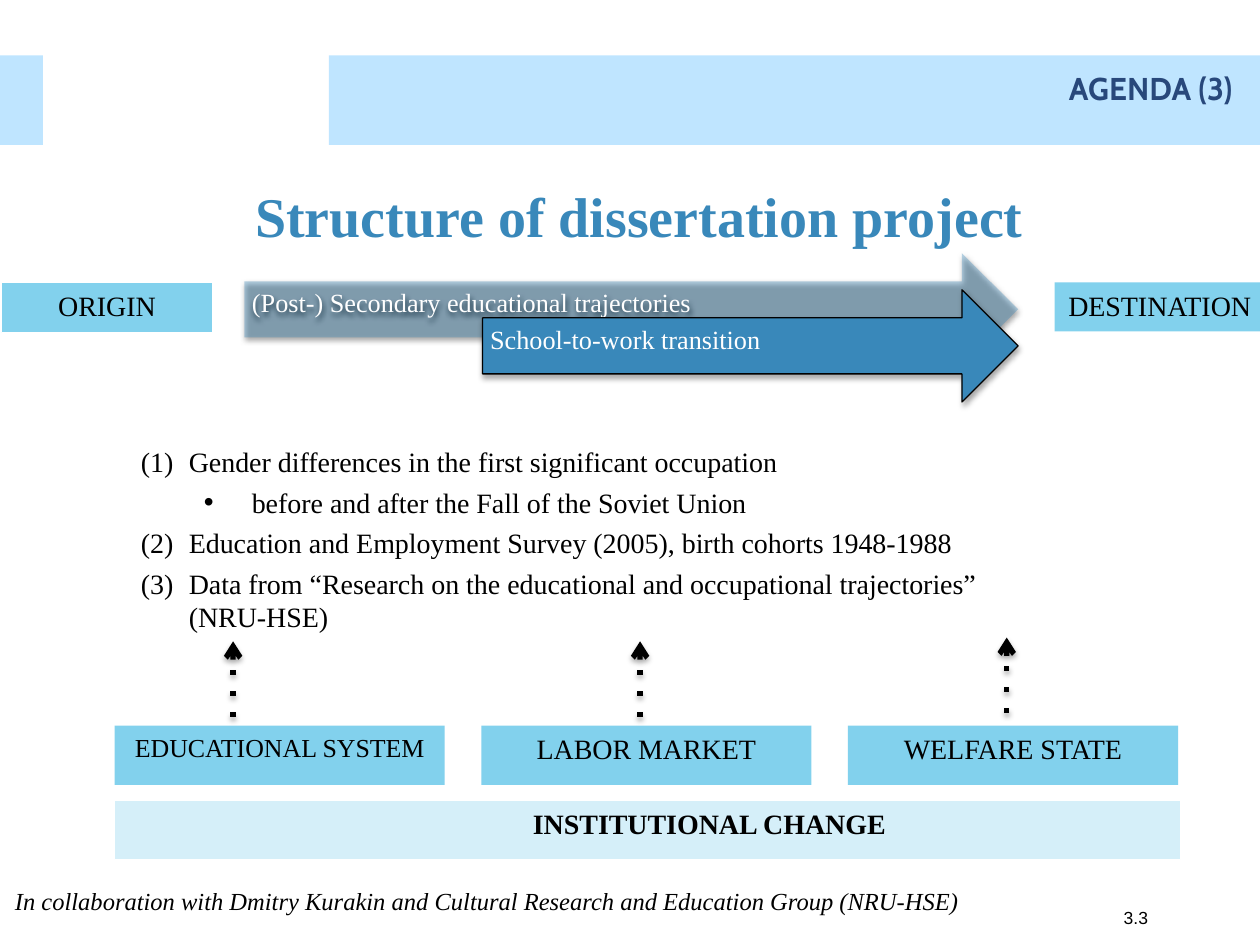
import pptx
import pptx.dml.color
import pptx.enum.dml
import pptx.enum.shapes
import pptx.enum.text
import pptx.oxml
import pptx.oxml.ns
import pptx.util
from lxml import etree

Inches = pptx.util.Inches
Pt = pptx.util.Pt
ALIGN = pptx.enum.text.PP_ALIGN
ANCHOR = pptx.enum.text.MSO_ANCHOR
SHAPE = pptx.enum.shapes.MSO_SHAPE
SERIF = "Times New Roman"
BLACK, WHITE, BLUE, SKY = "000000", "FFFFFF", "3988BA", "75CCEC"


def color(value):
    return pptx.dml.color.RGBColor.from_string(value)


def add_element(parent, tag, **attributes):
    return etree.SubElement(parent, pptx.oxml.ns.qn(tag), attributes)


def add_shadow(effects):
    """Fill an effect list with a soft shadow that falls straight down."""
    shadow = add_element(effects, "a:outerShdw", blurRad=str(Pt(3.1)), dist=str(Pt(1.8)),
                         dir="5400000", rotWithShape="0")
    shade = add_element(shadow, "a:srgbClr", val=BLACK)
    add_element(shade, "a:alpha", val="35000")


def format_paragraph(paragraph, size, tone=BLACK, font=SERIF, bold=False, italic=False,
                     align=ALIGN.LEFT):
    paragraph.alignment = align
    paragraph.font.size = Pt(size)
    paragraph.font.name = font
    paragraph.font.bold = bold
    paragraph.font.italic = italic
    paragraph.font.color.rgb = color(tone)


def add_shape(slide, kind, box, fill, opacity=100, line=None):
    shape = slide.shapes.add_shape(kind, *map(Inches, box))
    shape.shadow.inherit = False
    shape.fill.solid()
    shape.fill.fore_color.rgb = color(fill)
    if opacity < 100:
        tone = shape.fill._xPr.find(".//" + pptx.oxml.ns.qn("a:srgbClr"))
        add_element(tone, "a:alpha", val=str(opacity * 1000))
    if line:
        shape.line.color.rgb = color(line)
        shape.line.width = Pt(0.75)
    else:
        shape.line.fill.background()
    return shape


def add_text(slide, box, text, size, **style):
    frame = slide.shapes.add_textbox(*map(Inches, box)).text_frame
    frame.word_wrap = True
    frame.text = text
    format_paragraph(frame.paragraphs[0], size, **style)
    return frame


def add_label(slide, box, text, size=16, opacity=90, line=None, bold=False):
    frame = add_shape(slide, SHAPE.RECTANGLE, box, SKY, opacity, line).text_frame
    frame.word_wrap = True
    frame.vertical_anchor = ANCHOR.TOP
    frame.text = text
    format_paragraph(frame.paragraphs[0], size, bold=bold, align=ALIGN.CENTER)
    return frame


def add_banner(slide, top, height):
    for left, width in ((0, 0.34), (2.61, 7.39)):
        add_shape(slide, SHAPE.RECTANGLE, (left, top, width, height), "0099FF", 25)
    frame = add_text(slide, (2.65, top, 7.39, height), "AGENDA (3)", 18, tone="28487B",
                     font="Cabin", bold=True, align=ALIGN.RIGHT)
    frame.margin_right = Inches(0.26)
    frame.margin_bottom = Inches(0.01)
    frame.paragraphs[0].line_spacing = 1.2


def set_title(slide, box, text):
    title = slide.shapes.title
    title.left, title.top, title.width, title.height = map(Inches, box)
    title.text_frame.text = text
    title.text_frame.vertical_anchor = ANCHOR.MIDDLE
    format_paragraph(title.text_frame.paragraphs[0], 32, tone=BLUE, bold=True,
                     align=ALIGN.CENTER)


def add_stage_arrow(slide, box, text, opacity=100, line=None):
    arrow = add_shape(slide, SHAPE.RIGHT_ARROW, box, BLUE, opacity, line)
    add_shadow(arrow._element.spPr.find(pptx.oxml.ns.qn("a:effectLst")))
    frame = arrow.text_frame
    frame.word_wrap = True
    frame.vertical_anchor = ANCHOR.MIDDLE
    frame.margin_left = Inches(0.06)
    frame.margin_top = Inches(0.07)
    frame.margin_bottom = Inches(0.15)
    frame.text = text
    format_paragraph(frame.paragraphs[0], 15, tone=WHITE)
    frame.paragraphs[0].line_spacing = 0.9


def add_life_course(slide, top):
    right, height = 8.08, 0.89
    stages = ((1.94, 0, "(Post-) Secondary educational trajectories", 35, None),
              (3.83, 0.29, "School-to-work transition", 100, BLACK))
    for left, drop, text, opacity, line in stages:
        add_stage_arrow(slide, (left, top + drop, right - left, height), text, opacity, line)
    add_label(slide, (8.37, top + 0.23, 1.67, 0.39), "DESTINATION")
    add_label(slide, (0.01, top + 0.23, 1.68, 0.4), "ORIGIN", line=WHITE)


def add_topics(slide, box):
    topics = ((0, "Gender differences in the first significant occupation"),
              (1, "before and after the Fall of the Soviet Union"),
              (0, "Education and Employment Survey (2005), birth cohorts 1948-1988"),
              (0, "Data from “Research on the educational and occupational trajectories” "
                  "(NRU-HSE)"))
    frame = slide.shapes.add_textbox(*map(Inches, box)).text_frame
    frame.word_wrap = True
    for index, (level, text) in enumerate(topics):
        paragraph = frame.add_paragraph() if index else frame.paragraphs[0]
        paragraph.text = text
        paragraph.level = level
        if index:
            paragraph.space_before = Pt(4)
        properties = paragraph._p.get_or_add_pPr()
        properties.set("marL", str(Inches(0.38 + 0.5 * level)))
        properties.set("indent", str(Inches(-0.38)))
        if level:
            add_element(properties, "a:buFont", typeface="Arial")
            add_element(properties, "a:buChar", char="•")
        else:
            add_element(properties, "a:buAutoNum", type="arabicParenBoth")
        format_paragraph(paragraph, 16)


def add_dotted_arrow(slide, x, bottom, length):
    connector = slide.shapes.add_connector(
        pptx.enum.shapes.MSO_CONNECTOR.STRAIGHT,
        Inches(x), Inches(bottom), Inches(x), Inches(bottom - length))
    connector.line.color.rgb = color(BLACK)
    connector.line.width = Pt(3)
    line = connector.line._get_or_add_ln()
    add_element(line, "a:prstDash", val="dot")
    add_element(line, "a:tailEnd", type="arrow")
    add_shadow(add_element(connector._element.spPr, "a:effectLst"))


def add_institutions(slide, left, top):
    institutions = (("EDUCATIONAL SYSTEM", 14.8), ("LABOR MARKET", 16), ("WELFARE STATE", 16))
    for index, (text, size) in enumerate(institutions):
        add_label(slide, (left + 2.91 * index, top, 2.62, 0.47), text, size)
    change = add_label(slide, (left, top + 0.59, 8.46, 0.47), "INSTITUTIONAL CHANGE",
                       opacity=30, line=WHITE, bold=True)
    change.margin_left = Inches(1.08)
    for x, gap in ((1.85, 0.07), (5.08, 0.07), (7.99, 0.1)):
        add_dotted_arrow(slide, x, top - gap, 0.6)


def main():
    presentation = pptx.Presentation()
    presentation.slide_width = Inches(10)
    presentation.slide_height = Inches(7.5)
    slide = presentation.slides.add_slide(presentation.slide_layouts.get_by_name("Title Only"))
    add_banner(slide, 0.44, 0.71)
    set_title(slide, (0.43, 1.31, 9.29, 0.79), "Structure of dissertation project")
    add_life_course(slide, 2.01)
    add_topics(slide, (1.02, 3.48, 6.89, 1.61))
    add_institutions(slide, 0.91, 5.76)
    add_text(slide, (0.02, 6.98, 9.78, 0.34),
             "In collaboration with Dmitry Kurakin and Cultural Research and Education Group "
             "(NRU-HSE)", 14, italic=True)
    add_text(slide, (8.82, 7.15, 1.18, 0.35), "3.3", 10, font="Arial")
    presentation.save("out.pptx")


if __name__ == "__main__":
    main()
